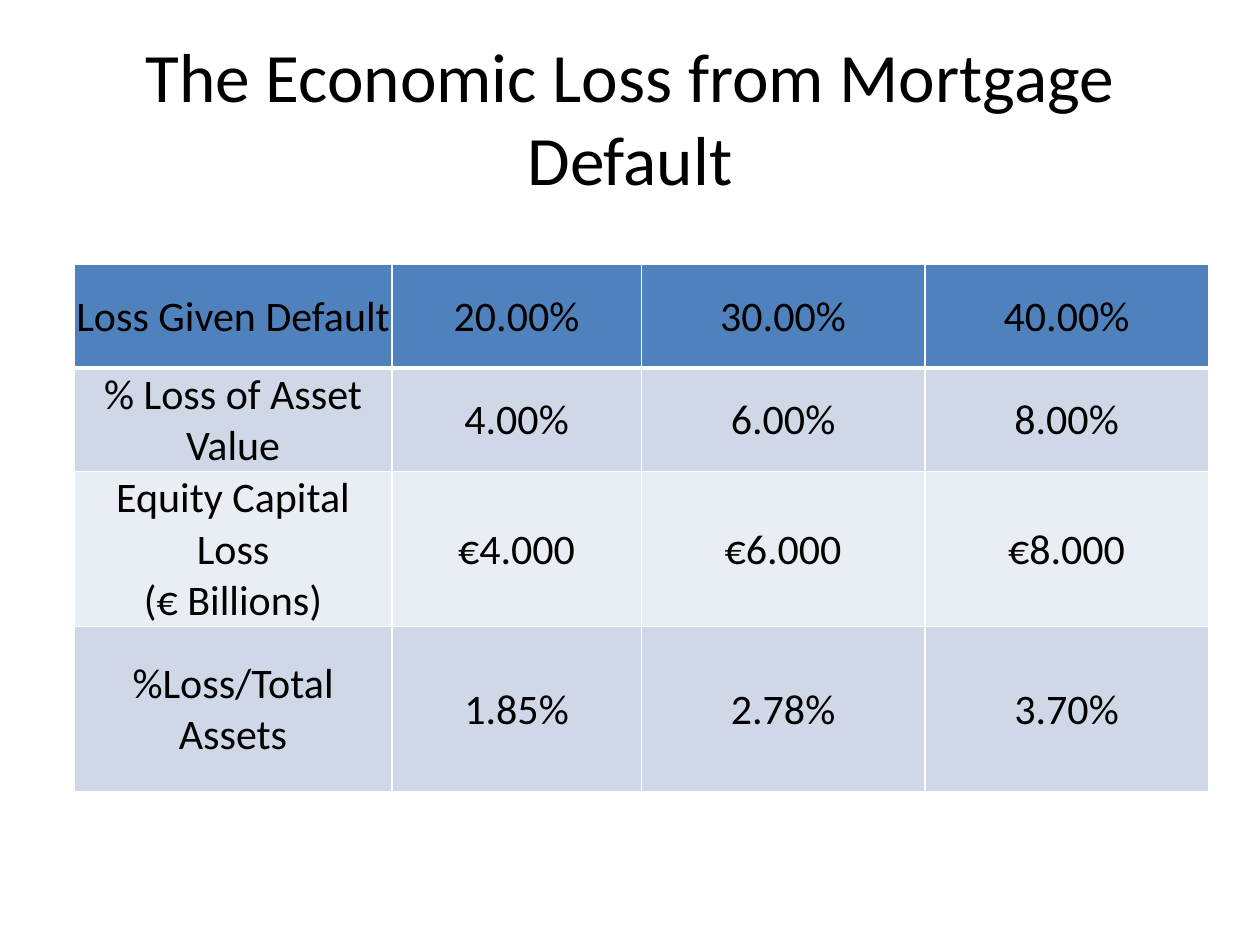
from lxml import etree
from pptx import Presentation
from pptx.dml.color import RGBColor
from pptx.enum.text import MSO_ANCHOR, PP_ALIGN
from pptx.oxml.ns import qn
from pptx.util import Pt

PX = 9144  # 100 px to the inch
MIDDLE = MSO_ANCHOR.MIDDLE
CENTER = PP_ALIGN.CENTER
BLACK = RGBColor(0x00, 0x00, 0x00)
WHITE = RGBColor(0xFF, 0xFF, 0xFF)
HEADER_BLUE = RGBColor(0x4F, 0x81, 0xBD)
BAND_DARK = RGBColor(0xD0, 0xD8, 0xE8)
BAND_LIGHT = RGBColor(0xE9, 0xED, 0xF4)

ROWS = [
    ("Loss Given Default", "20.00%", "30.00%", "40.00%"),
    ("% Loss of Asset Value", "4.00%", "6.00%", "8.00%"),
    ("Equity Capital Loss\n(€ Billions)", "€4.000", "€6.000", "€8.000"),
    ("%Loss/Total Assets", "1.85%", "2.78%", "3.70%"),
]
FILLS = [HEADER_BLUE, BAND_DARK, BAND_LIGHT, BAND_DARK]
COL_WIDTHS = [252, 198, 225, 225]
ROW_HEIGHTS = [82, 75, 103, 131]


def format_text(tf, size):
    tf.vertical_anchor = MIDDLE
    for p in tf.paragraphs:
        p.alignment = CENTER
        for r in p.runs:
            r.font.name = "Calibri"
            r.font.size = Pt(size)
            r.font.bold = False
            r.font.color.rgb = BLACK


def add_borders(cell, widths):
    """Draw white borders; widths are points for left, right, top, bottom."""
    tcPr = cell._tc.get_or_add_tcPr()
    for i, (side, width) in enumerate(zip("LRTB", widths)):
        ln = etree.Element(qn(f"a:ln{side}"), w=str(Pt(width)))
        fill = etree.SubElement(ln, qn("a:solidFill"))
        etree.SubElement(fill, qn("a:srgbClr"), val=str(WHITE))
        tcPr.insert(i, ln)


prs = Presentation()
prs.slide_width, prs.slide_height = 1000 * PX, 750 * PX
s = prs.slides.add_slide(prs.slide_layouts[5])

title = s.shapes.title
title.left, title.top, title.width, title.height = 50 * PX, 30 * PX, 900 * PX, 125 * PX
title.text_frame.text = "The Economic Loss from Mortgage Default"
format_text(title.text_frame, 39.6)

table = s.shapes.add_table(
    len(ROWS), len(COL_WIDTHS), 59 * PX, 210 * PX,
    sum(COL_WIDTHS) * PX, sum(ROW_HEIGHTS) * PX).table
for col, width in zip(table.columns, COL_WIDTHS):
    col.width = width * PX
for row, height in zip(table.rows, ROW_HEIGHTS):
    row.height = height * PX

for i, (values, color) in enumerate(zip(ROWS, FILLS)):
    for j, value in enumerate(values):
        cell = table.cell(i, j)
        cell.text_frame.text = value
        format_text(cell.text_frame, 24)
        cell.vertical_anchor = MIDDLE
        cell.margin_left = cell.margin_right = cell.margin_top = PX
        cell.margin_bottom = 0
        cell.fill.solid()
        cell.fill.fore_color.rgb = color
        add_borders(cell, (1, 1, 3 if i == 1 else 1, 3 if i == 0 else 1))

prs.save("out.pptx")
